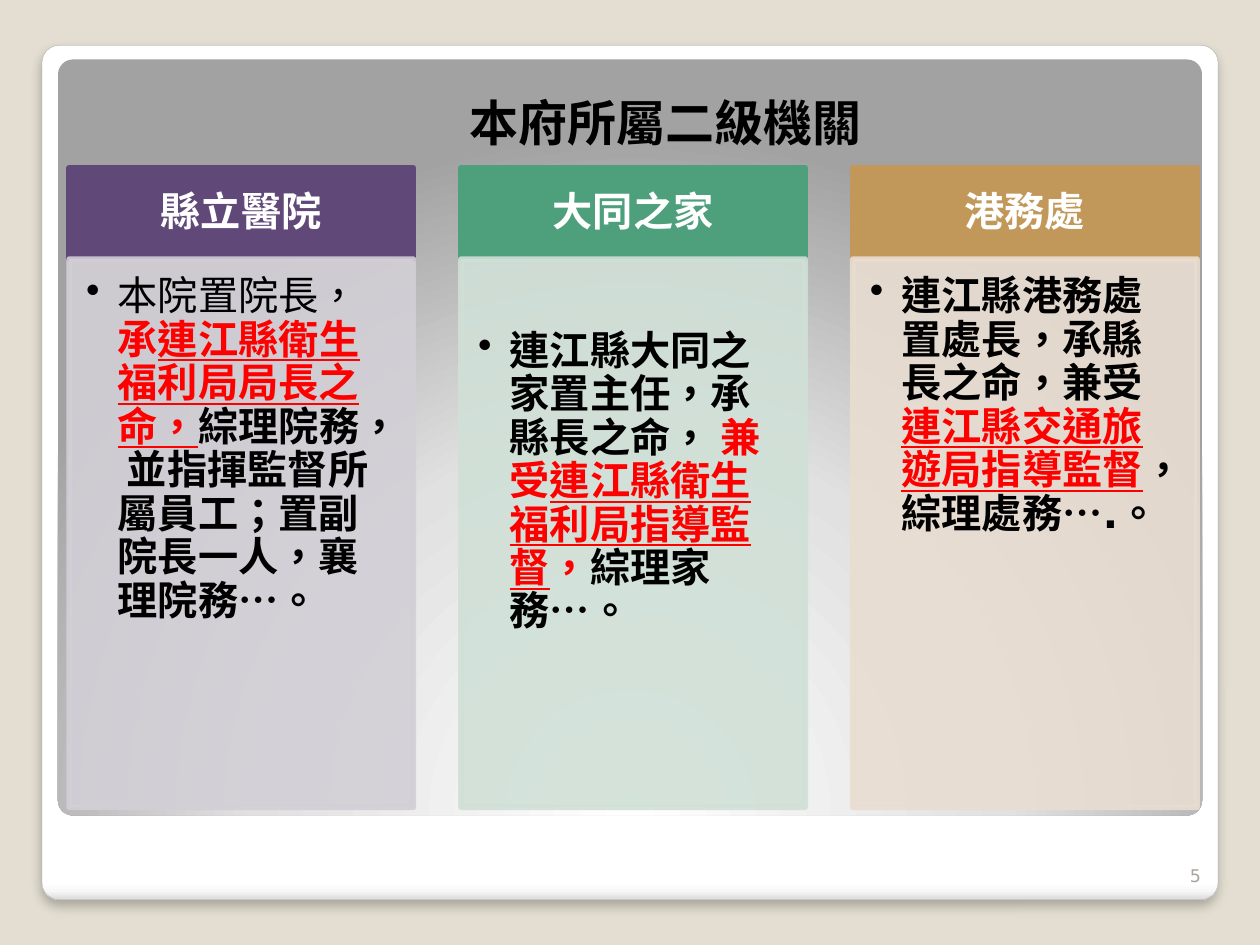
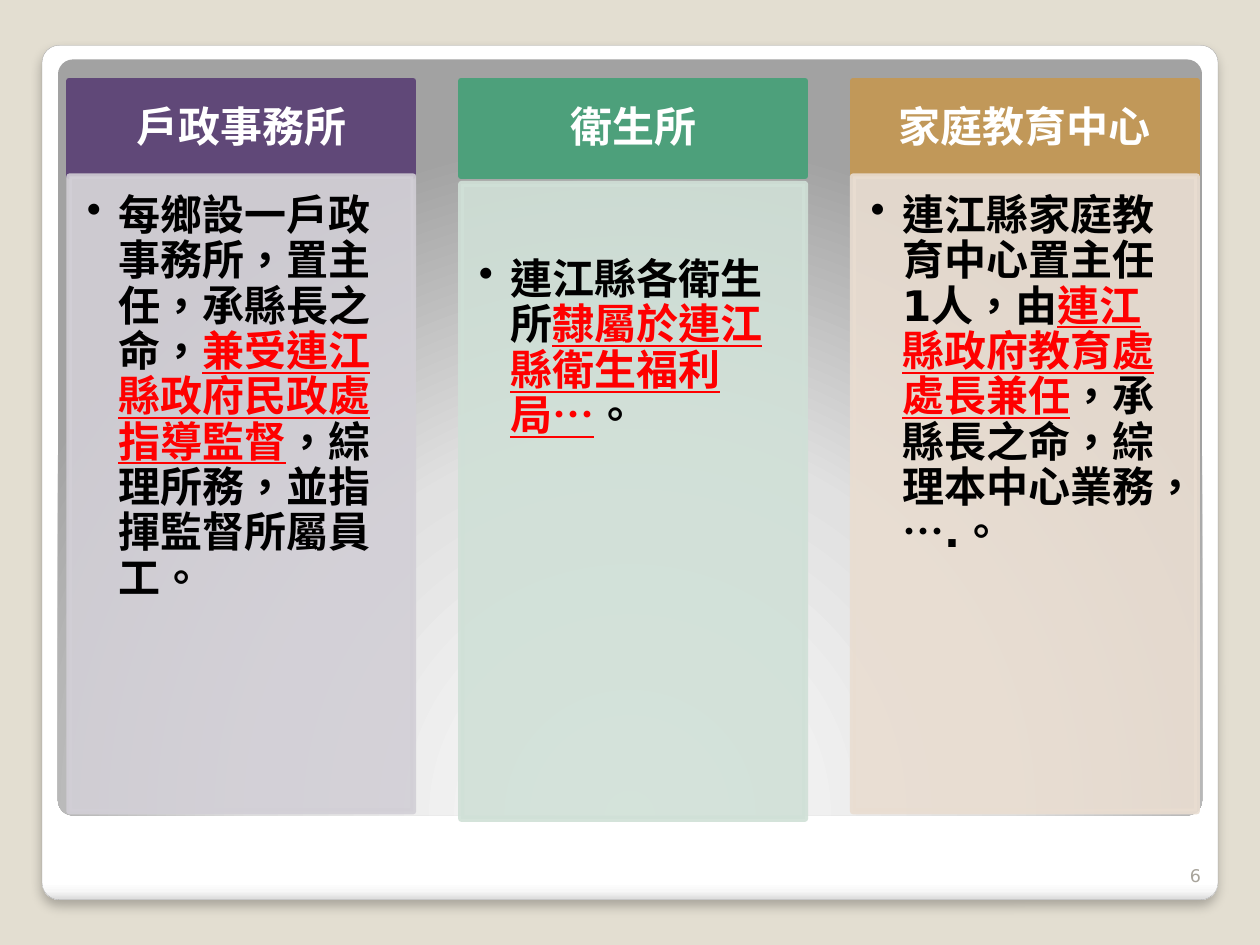
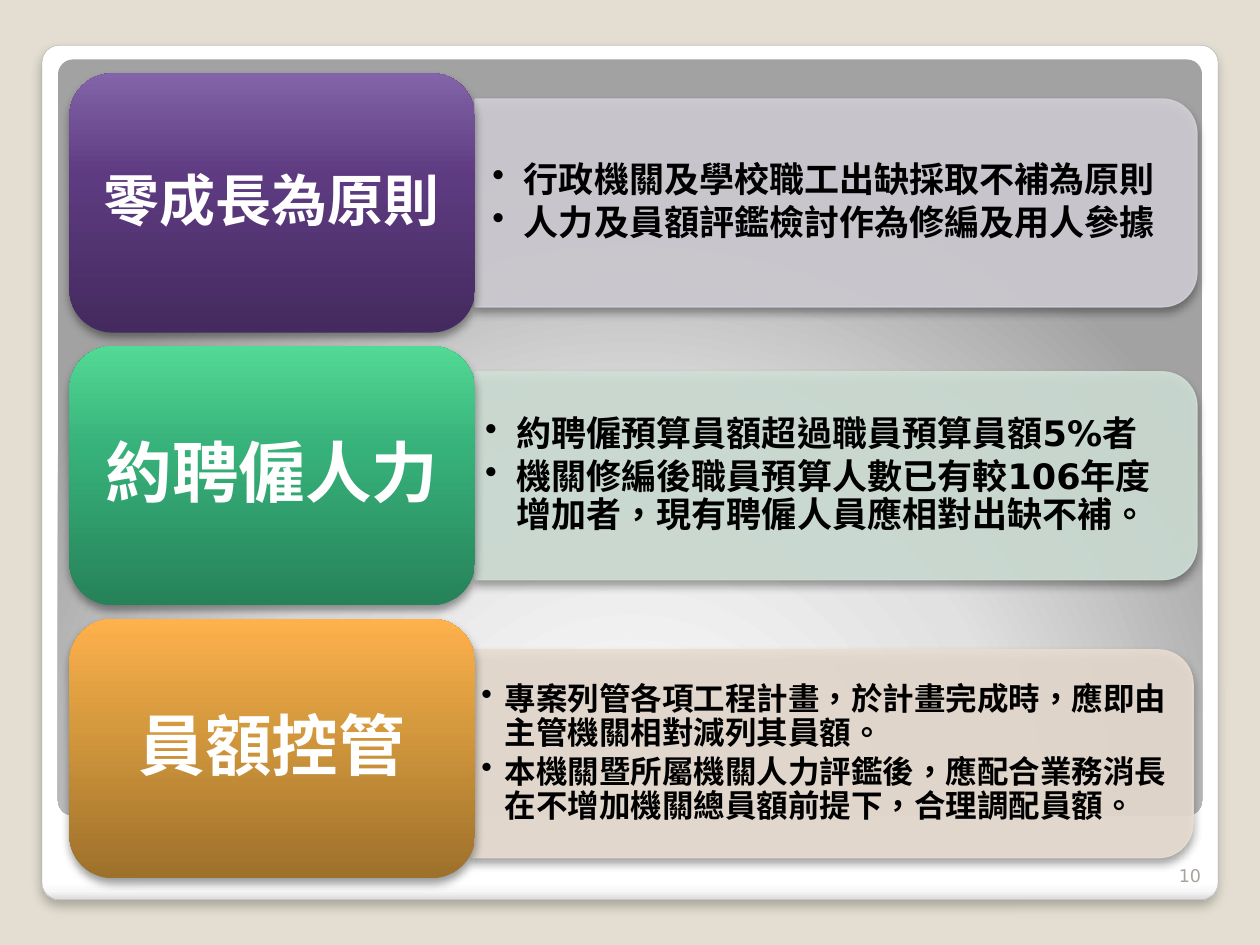
from pptx import Presentation
from pptx.dml.color import RGBColor
from pptx.enum.shapes import MSO_SHAPE
from pptx.enum.text import MSO_ANCHOR, MSO_AUTO_SIZE, PP_ALIGN
from pptx.oxml import parse_xml
from pptx.oxml.ns import nsdecls, qn
from pptx.util import Pt

FONT = "DejaVu Sans"
DARK = ["604878", "4DA07B", "C19859"]
PALE = ["D2CFD6", "D0E0D7", "E9DDD1"]
CARD_STOPS = [
    [(0, "442A5E"), (60, "5E3B81"), (100, "8364A8")],
    [(0, "268259"), (60, "37B17A"), (100, "52D995")],
    [(0, "9D702B"), (60, "D69A3E"), (100, "FFB14C")],
]
PLAIN = {"bold": False}
RED = {"color": "FF0000"}
RED_LINED = {"color": "FF0000", "underline": True}
LEFT = 39.6
COLUMN_WIDTH, COLUMN_PITCH = 196.6, 223.9
CARD_WIDTH, CARD_HEIGHT = 231.8, 148.3
CARD_TOP, CARD_PITCH = 41.8, 155.9
BAR_WIDTH, BAR_HEIGHT = 412.6, 118.8

AGENCIES = [
    ("縣立醫院", [("本院置院長，", PLAIN), ("承", RED), ("連江縣衛生福利局局長之命，", RED_LINED),
              ("綜理院務， 並指揮監督所屬員工；置副院長一人，襄理院務…。", {})]),
    ("大同之家", [("連江縣大同之家置主任，承縣長之命， ", {}), ("兼受", RED),
              ("連江縣衛生福利局指導監督", RED_LINED), ("，", RED), ("綜理家務…。", {})]),
    ("港務處", [("連江縣港務處置處長，承縣長之命，兼受", {}), ("連江縣交通旅遊局指導監督", RED_LINED),
             ("，綜理處務….。", {})]),
]
OFFICES = [
    ("戶政事務所", [("每鄉設一戶政事務所，置主任，承縣長之命，", {}),
               ("兼受連江縣政府民政處指導監督", RED_LINED), ("，綜理所務，並指揮監督所屬員工。", {})]),
    ("衛生所", [("連江縣各衛生所", {}), ("隸屬於連江縣衛生福利局…", RED_LINED), ("。", {})]),
    ("家庭教育中心", [("連江縣家庭教育中心置主任1人，由", {}), ("連江縣政府教育處處長兼任", RED_LINED),
                ("，承縣長之命，綜理本中心業務，….。", {})]),
]
PRINCIPLES = [
    {"heading": "零成長為原則", "heading_size": 32, "size": 20, "indent": 18, "margin": 10, "shift": (0, 0),
     "points": ["行政機關及學校職工出缺採取不補為原則", "人力及員額評鑑檢討作為修編及用人參據"]},
    {"heading": "約聘僱人力", "heading_size": 38, "size": 20, "indent": 18, "margin": 5.8, "shift": (0, 0),
     "points": ["約聘僱預算員額超過職員預算員額5%者",
                "機關修編後職員預算人數已有較106年度增加者，現有聘僱人員應相對出缺不補。"]},
    {"heading": "員額控管", "heading_size": 38, "size": 18, "indent": 13.5, "margin": 5.8, "shift": (-2.2, 3),
     "points": ["專案列管各項工程計畫，於計畫完成時，應即由主管機關相對減列其員額。",
                "本機關暨所屬機關人力評鑑後，應配合業務消長在不增加機關總員額前提下，合理調配員額。"]},
]


def rgb(value):
    """Turn a hex string into a colour."""
    return RGBColor.from_string(value)


def write(frame, paragraphs, size, color="000000", bold=True, align=PP_ALIGN.LEFT,
          anchor=MSO_ANCHOR.TOP, margins=(7.2, 3.6, 7.2, 3.6), spacing=None, after=0, indent=0):
    """Write paragraphs of (text, changes) runs into a text frame."""
    frame.word_wrap = True
    frame.auto_size = MSO_AUTO_SIZE.NONE
    frame.vertical_anchor = anchor
    frame.margin_left, frame.margin_top, frame.margin_right, frame.margin_bottom = map(Pt, margins)
    for index, runs in enumerate(paragraphs):
        paragraph = frame.add_paragraph() if index else frame.paragraphs[0]
        paragraph.alignment = align
        paragraph.line_spacing = spacing
        paragraph.space_after = Pt(after)
        if indent:
            properties = paragraph._p.get_or_add_pPr()
            properties.set("marL", str(Pt(indent)))
            properties.set("indent", str(-Pt(indent)))
            properties.append(parse_xml(f'<a:buChar {nsdecls("a")} char="•"/>'))
        for text, changes in runs:
            style = {"color": color, "bold": bold, "underline": False, **changes}
            run = paragraph.add_run()
            run.text = text
            run.font.name = FONT
            run.font.size = Pt(size)
            run.font.bold = style["bold"]
            run.font.underline = style["underline"]
            run.font.color.rgb = rgb(style["color"])
            run._r.get_or_add_rPr().set("lang", "zh-TW")


class Deck:
    """Hold the shared style and the current slide."""

    def __init__(self):
        """Create a presentation with the common background."""
        self.presentation = Presentation()
        self.presentation.slide_width, self.presentation.slide_height = Pt(720), Pt(540)
        self.master = self.presentation.slide_master
        fill = self.master.background.fill
        fill.solid()
        fill.fore_color.rgb = rgb("E3DED1")
        self.slide = None

    def start(self, number, title=None):
        """Start a slide with its number and optional title."""
        layout = self.presentation.slide_layouts[5 if title else 6]
        first = self.slide is None
        self.slide = self.presentation.slides.add_slide(layout)
        if first:
            self.frame()
        if title:
            shape = self.slide.shapes.title
            shape.left, shape.top, shape.width, shape.height = map(Pt, (110.9, 49, 538.6, 41))
            write(shape.text_frame, [[(title, {})]], size=28, align=PP_ALIGN.CENTER)
        self.text((657.4, 481, 36, 28.8), [[(str(number), {})]], size=10, color="A8A49B",
                  bold=False, align=PP_ALIGN.RIGHT, anchor=MSO_ANCHOR.BOTTOM)

    def frame(self):
        """Put the white card and the grey panel on the master."""
        card = self.shape(MSO_SHAPE.ROUNDED_RECTANGLE, (24, 25.9, 672, 488.2), line="A4A4A4", line_width=0.16)
        self.gradient(card, [(0, "FFFFFF"), (98, "FFFFFF"), (99, "F7F7F7"), (100, "DADADA")], angle=90)
        self.shadow(card, alpha=25, blur=6, distance=4)
        panel = self.shape(MSO_SHAPE.ROUNDED_RECTANGLE, (33.1, 34, 653.8, 432))
        self.gradient(panel, [(0, "FFFFFF"), (55, "E1E1E1"), (100, "A2A2A2")])
        for shape in (card, panel):
            shape.adjustments[0] = 0.02
            self.master.shapes.element.append(shape.element)

    def shape(self, kind, box, fill=None, line=None, line_width=0.75, alpha=100):
        """Add a preset shape without theme effects."""
        shape = self.slide.shapes.add_shape(kind, *map(Pt, box))
        shape.shadow.inherit = False
        for paint, color in ((shape.fill, fill), (shape.line.fill, line)):
            if color:
                paint.solid()
                paint.fore_color.rgb = rgb(color)
            else:
                paint.background()
        if line:
            shape.line.width = Pt(line_width)
        if alpha < 100:
            for color in shape.element.spPr.iter(qn("a:srgbClr")):
                color.append(parse_xml(f'<a:alpha {nsdecls("a")} val="{alpha * 1000}"/>'))
        return shape

    def gradient(self, shape, stops, angle=None):
        """Replace an empty fill by a linear or, without angle, a circular gradient."""
        colors = "".join(f'<a:gs pos="{position * 1000}"><a:srgbClr val="{color}"/></a:gs>'
                         for position, color in stops)
        if angle is None:
            course = ('<a:path path="circle"><a:fillToRect l="50000" t="175000" r="50000" b="-75000"/>'
                      '</a:path>')
        else:
            course = f'<a:lin ang="{angle * 60000}" scaled="0"/>'
        properties = shape.element.spPr
        properties.replace(properties.find(qn("a:noFill")), parse_xml(
            f'<a:gradFill {nsdecls("a")} rotWithShape="1"><a:gsLst>{colors}</a:gsLst>{course}</a:gradFill>'))

    def shadow(self, shape, alpha=40, blur=5.2, distance=3):
        """Add a soft shadow below a shape."""
        shape.element.spPr.find(qn("a:effectLst")).append(parse_xml(
            f'<a:outerShdw {nsdecls("a")} blurRad="{Pt(blur)}" dist="{Pt(distance)}" dir="5400000" '
            f'rotWithShape="0"><a:srgbClr val="000000"><a:alpha val="{alpha * 1000}"/></a:srgbClr>'
            '</a:outerShdw>'))

    def text(self, box, paragraphs, **style):
        """Add a text box."""
        write(self.slide.shapes.add_textbox(*map(Pt, box)).text_frame, paragraphs, **style)

    def heading(self, shape, text, size, margins):
        """Write a white centred heading into a shape."""
        write(shape.text_frame, [[(text, {})]], size=size, color="FFFFFF", align=PP_ALIGN.CENTER,
              anchor=MSO_ANCHOR.MIDDLE, margins=margins, spacing=0.9)

    def columns(self, columns, top, header_height, body_height, size, middle_shift=0):
        """Add headed columns, the middle one with its text set lower."""
        for index, (heading, runs) in enumerate(columns):
            left = LEFT + index * COLUMN_PITCH
            is_middle = index == 1
            header = self.shape(MSO_SHAPE.RECTANGLE, (left, top, COLUMN_WIDTH, header_height),
                                DARK[index], DARK[index], 3.35)
            self.heading(header, heading, size, [size * part for part in (0.56, 0.31, 0.56, 0.31)])
            body_top = top + header_height + middle_shift * is_middle
            body = self.shape(MSO_SHAPE.RECTANGLE, (left, body_top, COLUMN_WIDTH, body_height),
                              PALE[index], PALE[index], 3.35, alpha=90)
            text_top = 0.42 + 1.35 * is_middle
            write(body.text_frame, [runs], size=size, spacing=0.9, indent=18,
                  margins=[size * part for part in (0.42, text_top, 0.56, 0.63)])

    def principle(self, index, heading, heading_size, points, size, indent, margin, shift):
        """Add a heading card with a bar of points on its right."""
        top = CARD_TOP + index * CARD_PITCH
        bar_left = LEFT + CARD_WIDTH + shift[0]
        bar_top = top + (CARD_HEIGHT - BAR_HEIGHT) / 2 + shift[1]
        turn = (BAR_WIDTH - BAR_HEIGHT) / 2
        bar = self.shape(MSO_SHAPE.ROUND_2_SAME_RECTANGLE,
                         (bar_left + turn, bar_top - turn, BAR_HEIGHT, BAR_WIDTH),
                         PALE[index], PALE[index], alpha=90)
        bar.rotation = 90
        self.shadow(bar)
        self.text((bar_left, bar_top + 5.8, BAR_WIDTH - 5.8, BAR_HEIGHT - 11.6),
                  [[(point, {})] for point in points], size=size, anchor=MSO_ANCHOR.MIDDLE,
                  margins=(margin, margin / 2) * 2, spacing=0.9, after=size * 0.15, indent=indent)
        card = self.shape(MSO_SHAPE.ROUNDED_RECTANGLE, (LEFT, top, CARD_WIDTH, CARD_HEIGHT))
        self.gradient(card, CARD_STOPS[index], angle=270)
        self.shadow(card)
        self.heading(card, heading, heading_size, (heading_size * 0.3, heading_size * 0.15) * 2)


def main():
    """Build the three slides."""
    deck = Deck()
    deck.start(5, title="本府所屬二級機關")
    deck.columns(AGENCIES, top=95.8, header_height=52.3, body_height=313.2, size=23)
    deck.start(6)
    deck.columns(OFFICES, top=46.1, header_height=54.7, body_height=362.9, size=24, middle_shift=4.3)
    deck.start(10)
    for index, principle in enumerate(PRINCIPLES):
        deck.principle(index, **principle)
    deck.presentation.save("out.pptx")


if __name__ == "__main__":
    main()
